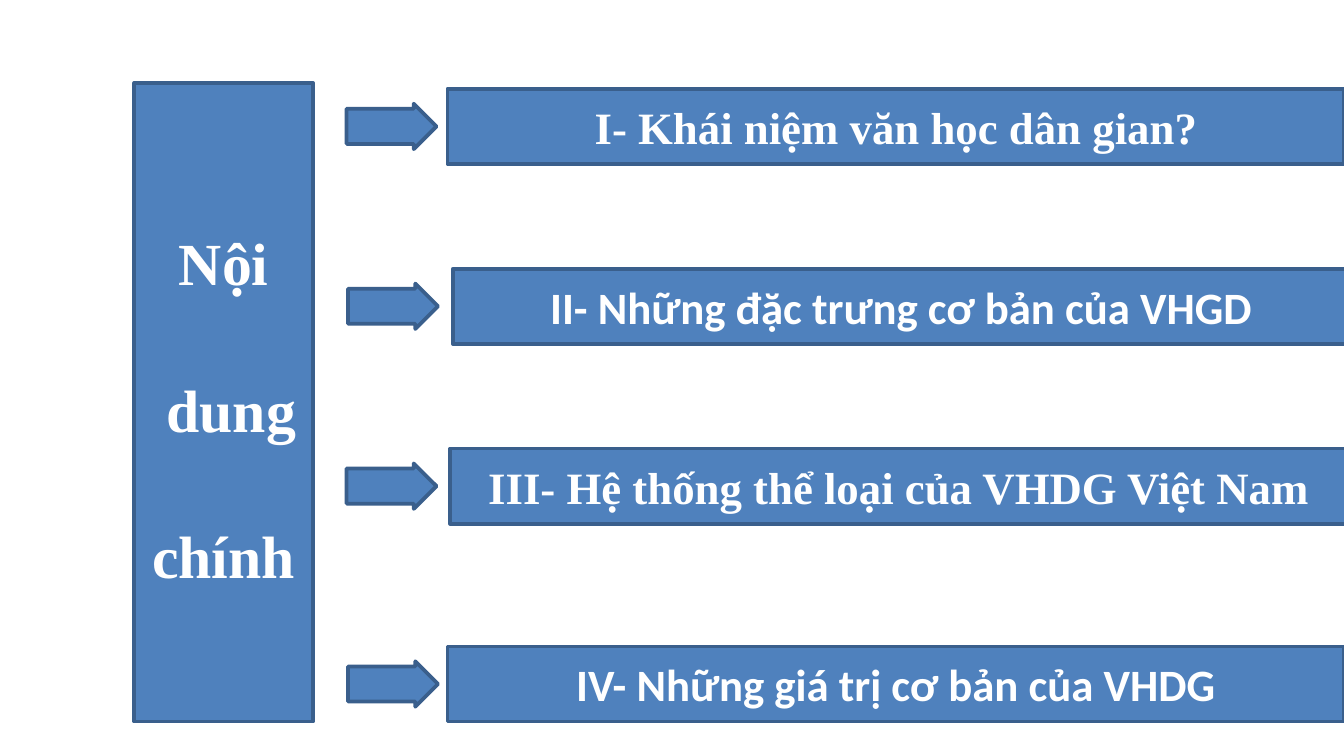
from pptx import Presentation
from pptx.dml.color import RGBColor
from pptx.enum.shapes import MSO_SHAPE
from pptx.enum.text import MSO_ANCHOR, PP_ALIGN
from pptx.util import Cm, Pt

RECTANGLE = MSO_SHAPE.RECTANGLE
RIGHT_ARROW = MSO_SHAPE.RIGHT_ARROW
MIDDLE = MSO_ANCHOR.MIDDLE
CENTER = PP_ALIGN.CENTER

BLUE = RGBColor(0x4F, 0x81, 0xBD)
DARK_BLUE = RGBColor(0x3A, 0x5F, 0x8C)
WHITE = RGBColor(0xFF, 0xFF, 0xFF)
SERIF = "Times New Roman"
SANS = "Calibri"

TOPICS = [
    (8.46, 1.68, 6.55, "I- Khái niệm văn học dân gian?", SERIF),
    (8.56, 5.08, 6.58, "II- Những đặc trưng cơ bản của VHGD", SANS),
    (8.51, 8.48, 6.55, "III- Hệ thống thể loại của VHDG Việt Nam", SERIF),
    (8.46, 12.22, 6.58, "IV- Những giá trị cơ bản của VHDG", SANS),
]


class OutlineSlide:
    def __init__(self, deck):
        self.slide = deck.slides.add_slide(deck.slide_layouts[6])

    def shape(self, kind, left, top, width, height):
        shape = self.slide.shapes.add_shape(
            kind, Cm(left), Cm(top), Cm(width), Cm(height))
        shape.shadow.inherit = False
        shape.fill.solid()
        shape.fill.fore_color.rgb = BLUE
        shape.line.color.rgb = DARK_BLUE
        shape.line.width = Pt(2)
        return shape

    def box(self, left, top, width, height, lines, font, size, gap=0):
        box = self.shape(RECTANGLE, left, top, width, height)
        frame = box.text_frame
        frame.word_wrap = True
        frame.vertical_anchor = MIDDLE
        for index, line in enumerate(lines):
            para = frame.add_paragraph() if index else frame.paragraphs[0]
            para.alignment = CENTER
            if index:
                para.space_before = Pt(gap)
            span = para.add_run()
            span.text = line
            span.font.name = font
            span.font.size = Pt(size)
            span.font.bold = True
            span.font.color.rgb = WHITE
        return box

    def arrow(self, left, top):
        arrow = self.shape(RIGHT_ARROW, left, top, 1.7, 0.86)
        arrow.adjustments[0] = 0.77
        arrow.adjustments[1] = 0.5


def main():
    deck = Presentation()
    deck.slide_width = Cm(25.4)
    deck.slide_height = Cm(14.29)
    page = OutlineSlide(deck)

    heading = page.box(2.54, 1.57, 3.38, 12.07,
                       ["Nội", " dung", "chính"], SERIF, 32, gap=40)
    heading.text_frame.margin_top = Cm(0.35)

    for left, top, arrow_left, topic, font in TOPICS:
        page.box(left, top, 16.94, 1.42, [topic], font, 24)
        page.arrow(arrow_left, top + 0.28)

    deck.save("out.pptx")


if __name__ == "__main__":
    main()
